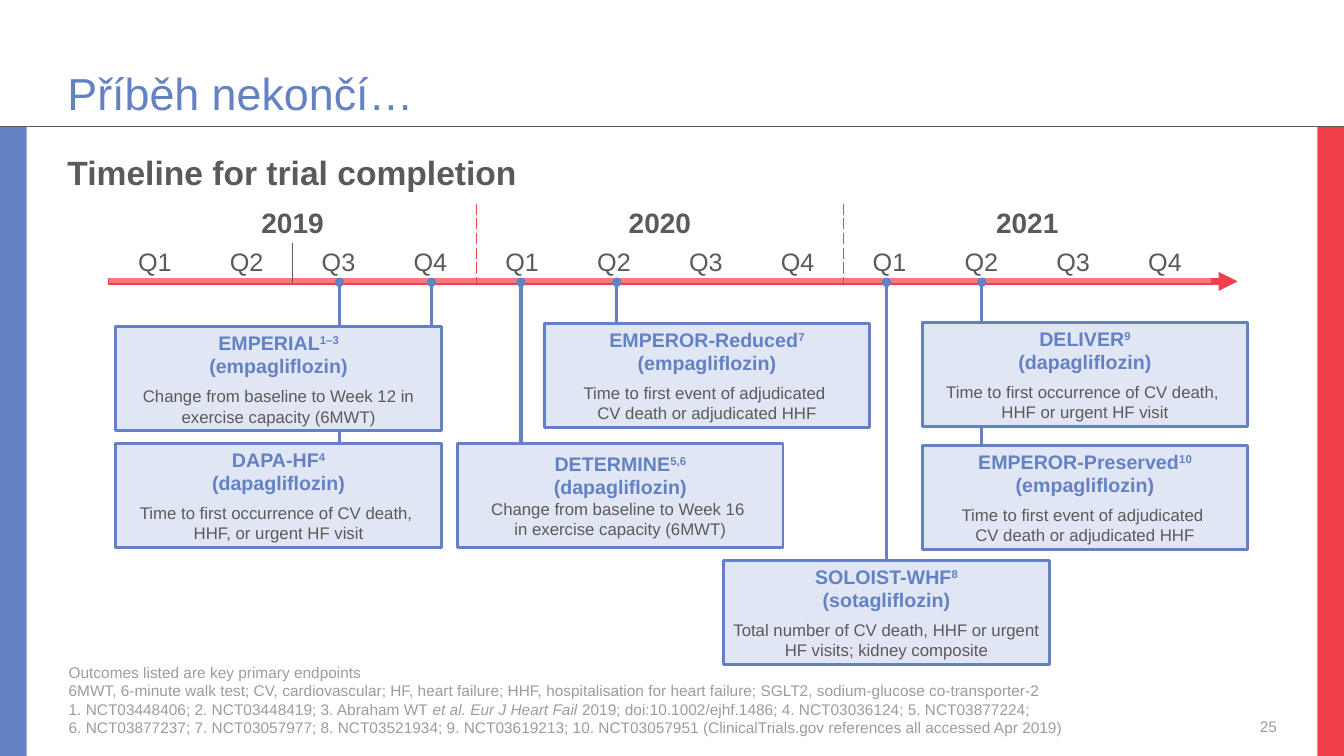
"""Build the slide with the timeline for trial completion."""
from lxml import etree
from pptx import Presentation
from pptx.dml.color import RGBColor
from pptx.enum.shapes import MSO_CONNECTOR, MSO_SHAPE
from pptx.enum.text import MSO_ANCHOR, PP_ALIGN
from pptx.oxml.ns import qn
from pptx.util import Pt

STRAIGHT = MSO_CONNECTOR.STRAIGHT
RECTANGLE = MSO_SHAPE.RECTANGLE
TOP, MIDDLE, BOTTOM = MSO_ANCHOR.TOP, MSO_ANCHOR.MIDDLE, MSO_ANCHOR.BOTTOM
LEFT, CENTER, RIGHT = PP_ALIGN.LEFT, PP_ALIGN.CENTER, PP_ALIGN.RIGHT

COLORS = {"blue": "6482C3", "red": "F0414B", "text": "5A5A5A",
          "muted": "9C9C9C", "pale": "E0E6F3", "white": "FFFFFF"}
FONT = "Arial"
YEARS = ["2019", "2020", "2021"]
QUARTERS = ["Q1", "Q2", "Q3", "Q4"]
COLUMN_WIDTH, ROW_HEIGHT = 65.6, 28.4
BOX_WIDTH, BOX_HEIGHT = 232.5, 74.2
AXIS_Y = 201.6

MARKERS = [(242.6, 316.8), (372.2, 328), (440.6, 241), (308.2, 233.3), (701.3, 328)]
TRIALS = [
    (82.8, 316.8, "DAPA-HF", "4", "dapagliflozin",
     "Time to first occurrence of CV death, \nHHF, or urgent HF visit", 6),
    (388.8, 231.1, "EMPEROR-Reduced", "7", "empagliflozin",
     "Time to first event of adjudicated \nCV death or adjudicated HHF", 6),
    (658.8, 230.4, "DELIVER", "9", "dapagliflozin",
     "Time to first occurrence of CV death, \nHHF or urgent HF visit", 6),
    (82.8, 233.3, "EMPERIAL", "1–3", "empagliflozin",
     "Change from baseline to Week 12 in exercise capacity (6MWT)", 6),
    (326.9, 316.8, "DETERMINE", "5,6", "dapagliflozin",
     "Change from baseline to Week 16 \nin exercise capacity (6MWT)", 0),
    (658.8, 318.2, "EMPEROR-Preserved", "10", "empagliflozin",
     "Time to first event of adjudicated \nCV death or adjudicated HHF", 6),
]
SOLOIST = (517, 400.3, "SOLOIST-WHF", "8", "sotagliflozin",
           "Total number of CV death, HHF or urgent HF visits; kidney composite", 6)
FOOTNOTES = [
    "Outcomes listed are key primary endpoints",
    "6MWT, 6-minute walk test; CV, cardiovascular; HF, heart failure; HHF, hospitalisation "
    "for heart failure; SGLT2, sodium-glucose co-transporter-2",
    "1. NCT03448406; 2. NCT03448419; 3. Abraham WT ",
]
JOURNAL = "et al. Eur J Heart Fail "
REFERENCES = [
    "2019; doi:10.1002/ejhf.1486; 4. NCT03036124; 5. NCT03877224; ",
    "6. NCT03877237; 7. NCT03057977; 8. NCT03521934; 9. NCT03619213; "
    "10. NCT03057951 (ClinicalTrials.gov references all accessed Apr 2019)",
]


def rgb(name):
    return RGBColor.from_string(COLORS[name])


def style(para, size, color, bold=False, align=LEFT):
    para.alignment = align
    for span in para.runs:
        font = span.font
        font.name, font.size, font.bold = FONT, Pt(size), bold
        font.color.rgb = rgb(color)


def set_margins(frame, side, end):
    frame.margin_left = frame.margin_right = Pt(side)
    frame.margin_top = frame.margin_bottom = Pt(end)


def add_text(page, x, y, width, height, text, size, color,
             bold=False, align=LEFT, anchor=BOTTOM):
    box = page.shapes.add_textbox(Pt(x), Pt(y), Pt(width), Pt(height))
    frame = box.text_frame
    frame.word_wrap = True
    frame.vertical_anchor = anchor
    set_margins(frame, 0, 0)
    frame.text = text
    for para in frame.paragraphs:
        style(para, size, color, bold, align)
    return box


def add_box(page, x, y, width, height, fill):
    box = page.shapes.add_shape(RECTANGLE, Pt(x), Pt(y), Pt(width), Pt(height))
    box.shadow.inherit = False
    box.fill.solid()
    box.fill.fore_color.rgb = rgb(fill)
    box.line.fill.background()
    return box


def add_line(page, start, end, color, weight, head=None):
    line = page.shapes.add_connector(STRAIGHT, *(Pt(value) for value in (*start, *end)))
    line.line.color.rgb = rgb(color)
    line.line.width = Pt(weight)
    if head:
        etree.SubElement(line.line._get_or_add_ln(), qn("a:tailEnd"), type=head)
    etree.SubElement(line._element.spPr, qn("a:effectLst"))
    return line


def add_marker(page, x, y):
    return add_line(page, (x, y), (x, AXIS_Y), "blue", 2.25, "oval")


def add_trial(page, x, y, name, reference, drug, endpoint, gap):
    box = add_box(page, x, y, BOX_WIDTH, BOX_HEIGHT, "pale")
    box.line.color.rgb = rgb("blue")
    box.line.width = Pt(2)
    frame = box.text_frame
    frame.word_wrap = True
    frame.vertical_anchor = MIDDLE
    set_margins(frame, 2.9, 3.6)
    heading = frame.paragraphs[0]
    heading.text = name
    mark = heading.add_run()
    mark.text = reference
    style(heading, 14, "blue", True, CENTER)
    mark.font._element.set("baseline", "30000")
    treatment = frame.add_paragraph()
    treatment.text = f"({drug})"
    style(treatment, 14, "blue", True, CENTER)
    outcome = frame.add_paragraph()
    outcome.text = endpoint
    outcome.space_before = Pt(gap)
    style(outcome, 12, "text", False, CENTER)
    return box


def edge_style(row, boundary):
    if boundary in (4, 8):
        return "red", "sysDash"
    if row == 1 and boundary == 2:
        return "text", "solid"
    return None


def set_borders(cell, edges):
    properties = cell._tc.get_or_add_tcPr()
    for index, side in enumerate("LRTB"):
        border = etree.Element(qn(f"a:ln{side}"), w=str(Pt(1)))
        properties.insert(index, border)
        edge = edges.get(side)
        if edge is None:
            etree.SubElement(border, qn("a:noFill"))
            continue
        color, dash = edge
        fill = etree.SubElement(border, qn("a:solidFill"))
        etree.SubElement(fill, qn("a:srgbClr"), val=COLORS[color])
        etree.SubElement(border, qn("a:prstDash"), val=dash)


def add_calendar(page):
    count = len(YEARS) * len(QUARTERS)
    table = page.shapes.add_table(2, count, Pt(77.8), Pt(145.4), Pt(COLUMN_WIDTH * count),
                                  Pt(ROW_HEIGHT * 2)).table
    table.first_row = table.horz_banding = False
    for column in table.columns:
        column.width = Pt(COLUMN_WIDTH)
    for index, year in enumerate(YEARS):
        first = index * len(QUARTERS)
        table.cell(0, first).merge(table.cell(0, first + len(QUARTERS) - 1))
        table.cell(0, first).text = year
        for offset, quarter in enumerate(QUARTERS):
            table.cell(1, first + offset).text = quarter
    for row in range(2):
        for column in range(count):
            cell = table.cell(row, column)
            set_margins(cell, 7.2, 0)
            cell.vertical_anchor = MIDDLE
            cell.fill.solid()
            cell.fill.fore_color.rgb = rgb("white")
            tint = cell._tc.tcPr.find(".//" + qn("a:srgbClr"))
            etree.SubElement(tint, qn("a:alpha"), val="30000")
            width = cell.span_width if cell.is_merge_origin else 1
            set_borders(cell, {"L": edge_style(row, column),
                               "R": edge_style(row, column + width)})
            style(cell.text_frame.paragraphs[0], (20, 18)[row], "text", row == 0, CENTER)


def add_footnotes(page):
    box = add_text(page, 49, 473.8, 725.8, 52.5, "\n".join(FOOTNOTES), 11, "muted")
    para = box.text_frame.paragraphs[-1]
    journal = para.add_run()
    journal.text = JOURNAL
    for index, reference in enumerate(REFERENCES):
        if index:
            para.add_line_break()
        para.add_run().text = reference
    style(para, 11, "muted")
    journal.font.italic = True


def main():
    deck = Presentation()
    deck.slide_width, deck.slide_height = Pt(960), Pt(540)
    page = deck.slides.add_slide(deck.slide_layouts[6])
    add_box(page, 0, 90, 19, 450, "blue")
    add_box(page, 941, 90, 19, 450, "red")
    add_line(page, (0, 90), (960, 90), "text", 0.25)
    add_line(page, (77, 201), (884, 201), "red", 4.5, "triangle")
    add_calendar(page)
    add_text(page, 48.2, 13, 806.4, 72, "Příběh nekončí…", 32, "blue")
    add_text(page, 48.2, 108.7, 866.9, 47.5, "Timeline for trial completion", 24, "text",
             bold=True, anchor=TOP)
    add_footnotes(page)
    add_text(page, 865.4, 496.8, 46.8, 28.8, "25", 11, "muted", align=RIGHT)
    for x, y in MARKERS:
        add_marker(page, x, y)
    for trial in TRIALS:
        add_trial(page, *trial)
    soloist = add_trial(page, *SOLOIST)
    marker = add_marker(page, SOLOIST[0] + BOX_WIDTH / 2, SOLOIST[1])
    marker.begin_connect(soloist, 0)
    deck.save("out.pptx")


if __name__ == "__main__":
    main()
